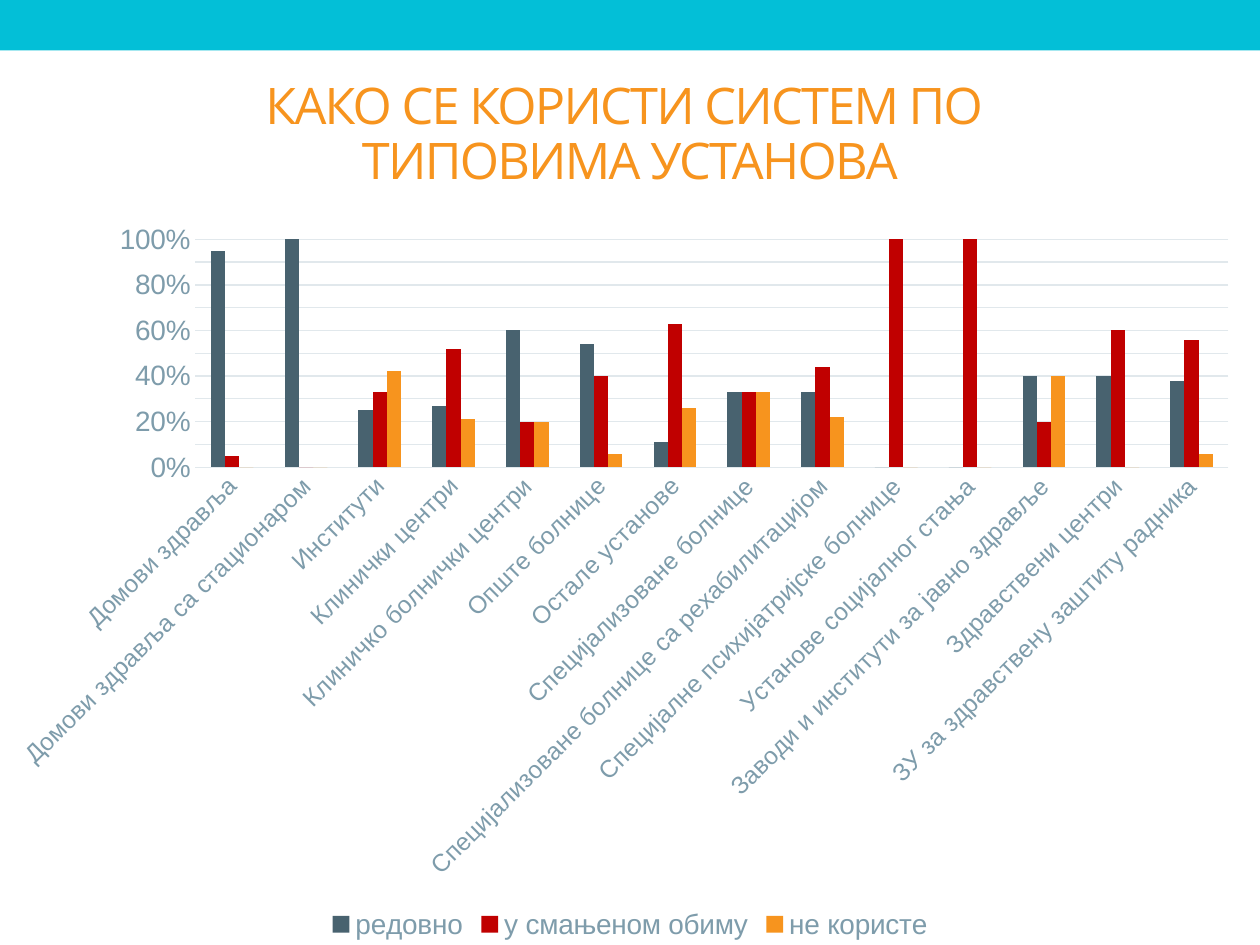
from copy import deepcopy
from dataclasses import dataclass

from lxml import etree
from pptx import Presentation
from pptx.chart.data import CategoryChartData
from pptx.dml.color import RGBColor
from pptx.enum import chart as ch, shapes, text
from pptx.oxml import parse_xml
from pptx.oxml.ns import nsdecls, qn
from pptx.util import Pt

CYAN, ORANGE, SLATE, RED = "03BFD7", "F7941E", "48626F", "C00000"
LABEL, GRID, WHITE = "7E9CAB", "E1E8EC", "FFFFFF"


@dataclass
class Series:
    name: str
    color: str
    values: tuple[float, ...]


CATEGORIES = (
    "Домови здравља", "Домови здравља са стационаром", "Институти",
    "Клинички центри", "Клиничко болнички центри", "Опште болнице",
    "Остале установе", "Специјализоване болнице",
    "Специјализоване болнице са рехабилитацијом",
    "Специјалне психијатријске болнице", "Установе социјалног стања",
    "Заводи и институти за јавно здравље", "Здравствени центри",
    "ЗУ за здравствену заштиту радника",
)
SERIES = (
    Series("редовно", SLATE,
           (0.95, 1, 0.25, 0.27, 0.6, 0.54, 0.11, 0.33, 0.33, 0, 0, 0.4, 0.4, 0.38)),
    Series("у смањеном обиму", RED,
           (0.05, 0, 0.33, 0.52, 0.2, 0.4, 0.63, 0.33, 0.44, 1, 1, 0.2, 0.6, 0.56)),
    Series("не користе", ORANGE,
           (0, 0, 0.42, 0.21, 0.2, 0.06, 0.26, 0.33, 0.22, 0, 0, 0.4, 0, 0.06)),
)


def rgb(value: str) -> RGBColor:
    return RGBColor.from_string(value)


def set_font(font, size: float, color: str, name: str = "Arial") -> None:
    font.size, font.name, font.bold = Pt(size), name, False
    font.color.rgb = rgb(color)


def set_line(line, color: str) -> None:
    line.color.rgb = rgb(color)
    line.width = Pt(0.75)


def add_text(s, content: str, *, box, size, color, font, spacing, bottom) -> None:
    sp = s.shapes.add_textbox(*map(Pt, box))
    tf = sp.text_frame
    tf.word_wrap = True
    tf.vertical_anchor = text.MSO_ANCHOR.BOTTOM
    tf.margin_bottom = Pt(bottom)
    p = tf.paragraphs[0]
    p.text = content
    p.alignment = text.PP_ALIGN.CENTER
    p.line_spacing = 0.9
    for r in p.runs:
        set_font(r.font, size, color, font)
        r.font._element.set("spc", str(round(spacing * 100)))


def white_fill():
    return parse_xml(f'<c:spPr {nsdecls("c", "a")}><a:solidFill>'
                     f'<a:srgbClr val="{WHITE}"/></a:solidFill>'
                     '<a:ln><a:noFill/></a:ln></c:spPr>')


def place_plot(plot_area, **fractions: float) -> None:
    """Fix the inner plot rectangle as fractions of the chart frame."""
    for old in plot_area.findall(qn("c:layout")):
        plot_area.remove(old)
    layout = parse_xml(f'<c:layout {nsdecls("c")}><c:manualLayout/></c:layout>')
    settings = {"layoutTarget": "inner", "xMode": "edge", "yMode": "edge", **fractions}
    for tag, value in settings.items():
        etree.SubElement(layout[0], qn(f"c:{tag}")).set("val", str(value))
    plot_area.insert(0, layout)


def add_usage_chart(s) -> None:
    data = CategoryChartData(number_format="0%")
    data.categories = CATEGORIES
    for item in SERIES:
        data.add_series(item.name, item.values)
    chart = s.shapes.add_chart(ch.XL_CHART_TYPE.COLUMN_CLUSTERED,
                               Pt(0), Pt(120), Pt(720), Pt(420), data).chart
    set_font(chart.font, 10, SLATE)
    chart.has_title = False

    # Columns
    plot = chart.plots[0]
    plot.gap_width, plot.overlap, plot.vary_by_categories = 219, 0, False
    for series, item in zip(plot.series, SERIES):
        series.format.fill.solid()
        series.format.fill.fore_color.rgb = rgb(item.color)
        series.invert_if_negative = False

    # Axes
    cat, val = chart.category_axis, chart.value_axis
    for axis, size in ((cat, 14), (val, 16)):
        axis.major_tick_mark = axis.minor_tick_mark = ch.XL_TICK_MARK.NONE
        set_font(axis.tick_labels.font, size, LABEL)
    set_line(cat.format.line, GRID)
    cat._element.find(qn("c:txPr")).find(qn("a:bodyPr")).set("rot", "-2700000")
    val.format.line.fill.background()
    val.minimum_scale, val.maximum_scale = 0, 1
    val.major_unit, val.minor_unit = 0.2, 0.1
    val.tick_labels.number_format = "0%"
    val.tick_labels.number_format_is_linked = False

    # Gridlines: the minor ones share the format of the major ones
    val.has_major_gridlines = val.has_minor_gridlines = True
    set_line(val.major_gridlines.format.line, GRID)
    major, minor = (val._element.find(qn(f"c:{kind}Gridlines")) for kind in ("major", "minor"))
    minor.append(deepcopy(major.find(qn("c:spPr"))))

    # Legend
    chart.has_legend = True
    chart.legend.position = ch.XL_LEGEND_POSITION.BOTTOM
    chart.legend.include_in_layout = False
    set_font(chart.legend.font, 16, LABEL)

    # Backgrounds and plot position
    space = chart._chartSpace
    space.find(qn("c:chart")).addnext(white_fill())
    plot_area = space.chart.plotArea
    plot_area.append(white_fill())
    place_plot(plot_area, x=0.155, y=0.04, w=0.82, h=0.31)


def main() -> None:
    prs = Presentation()
    prs.slide_width, prs.slide_height = Pt(720), Pt(540)
    s = prs.slides.add_slide(prs.slide_layouts[6])

    # Top band
    band = s.shapes.add_shape(shapes.MSO_SHAPE.RECTANGLE, Pt(0), Pt(0), Pt(720), Pt(28.8))
    band.shadow.inherit = False
    band.fill.solid()
    band.fill.fore_color.rgb = rgb(CYAN)
    band.line.fill.background()

    # Title
    add_text(s, "КАКО СЕ КОРИСТИ СИСТЕМ ПО \vТИПОВИМА УСТАНОВА",
             box=(36, 54, 648, 66), size=28.8, color=ORANGE,
             font="Open Sans", spacing=-1, bottom=11.4)

    add_usage_chart(s)
    prs.save("out.pptx")


if __name__ == "__main__":
    main()
